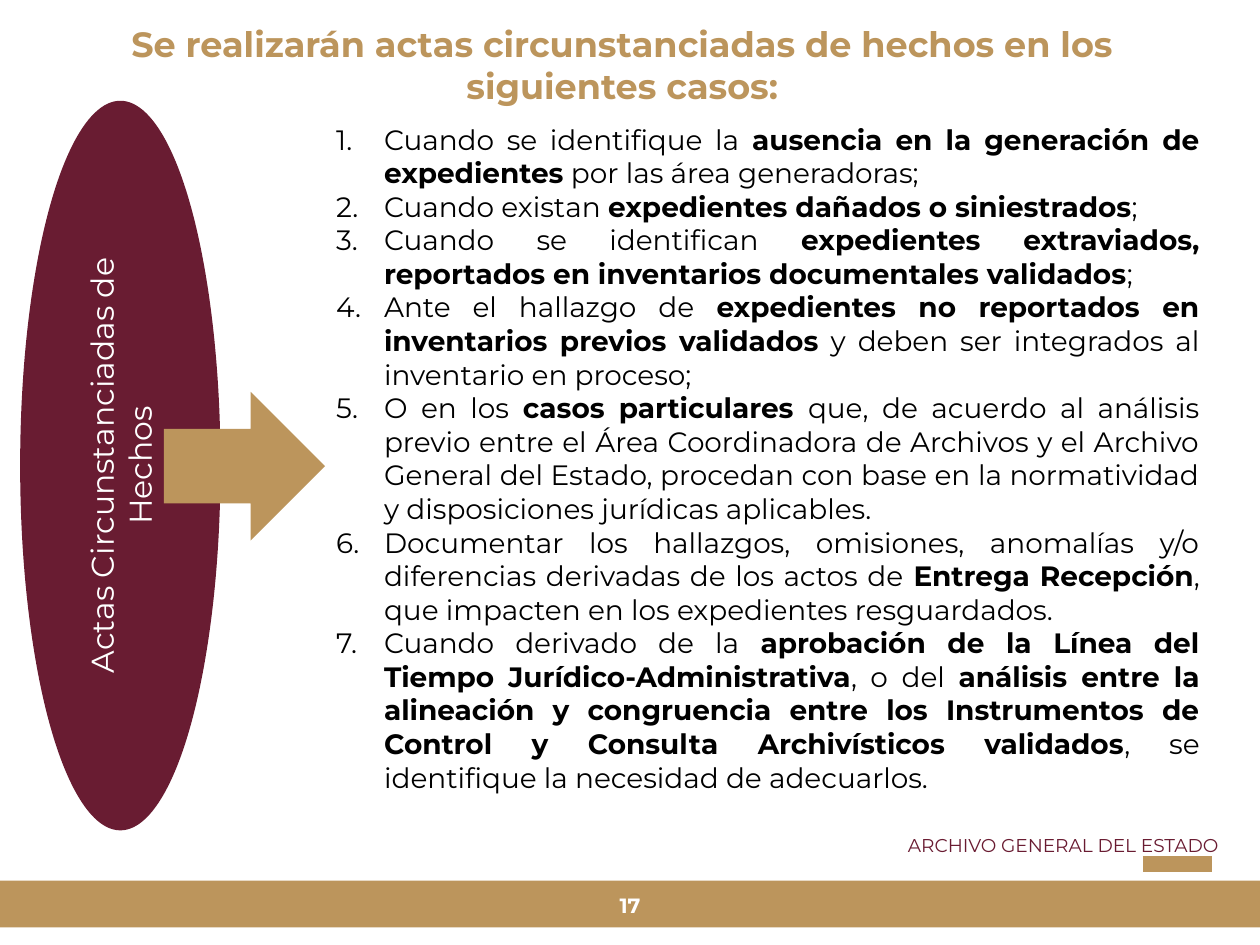
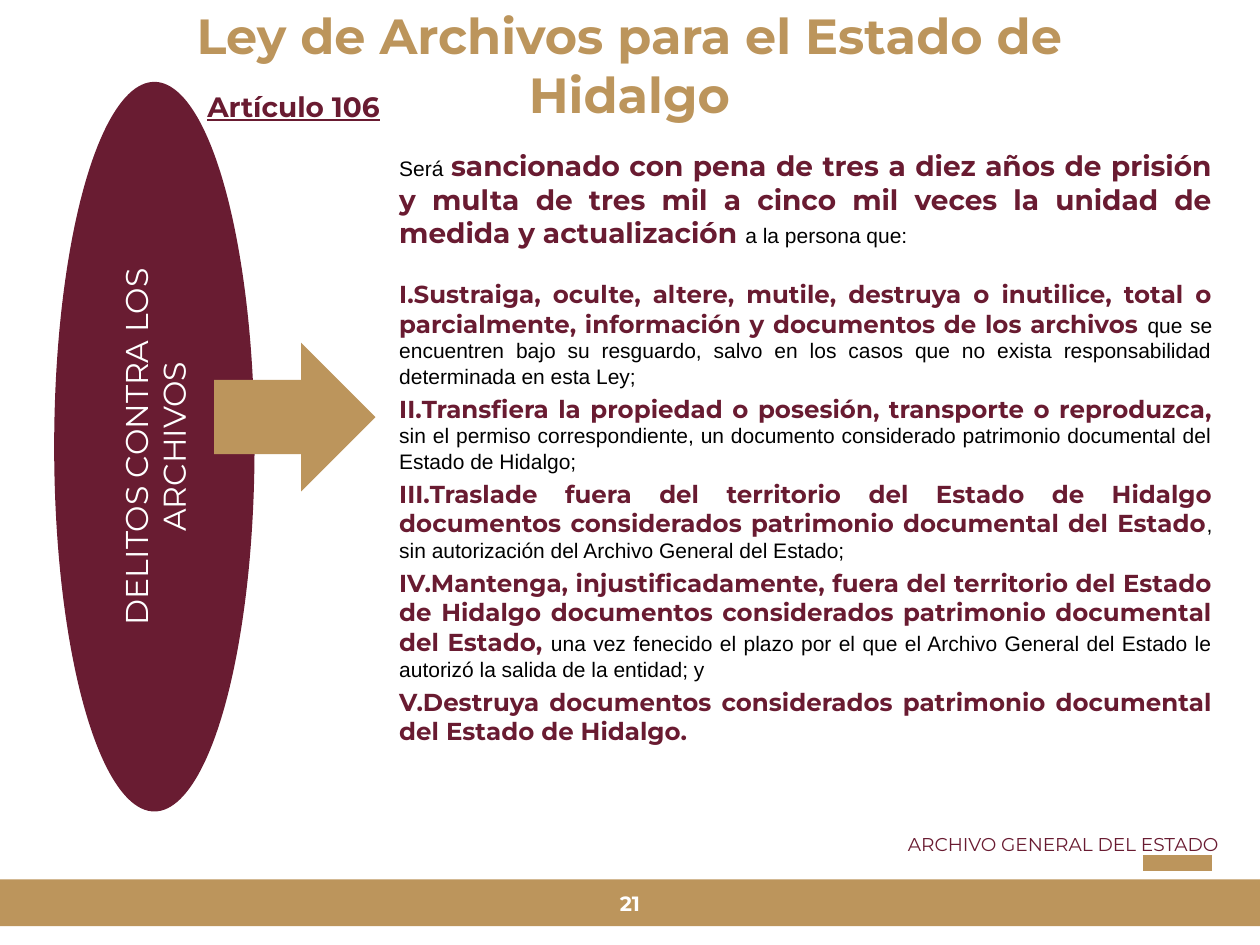
from dataclasses import dataclass

from lxml import etree
from pptx import Presentation
from pptx.dml.color import RGBColor
from pptx.enum.shapes import MSO_CONNECTOR, MSO_SHAPE
from pptx.enum.text import MSO_ANCHOR, PP_ALIGN
from pptx.oxml.ns import qn
from pptx.util import Inches, Pt

RECT, ELLIPSE, ARROW = MSO_SHAPE.RECTANGLE, MSO_SHAPE.OVAL, MSO_SHAPE.RIGHT_ARROW
STRAIGHT = MSO_CONNECTOR.STRAIGHT
TOP, MIDDLE = MSO_ANCHOR.TOP, MSO_ANCHOR.MIDDLE
CENTER, RIGHT, JUSTIFY = PP_ALIGN.CENTER, PP_ALIGN.RIGHT, PP_ALIGN.JUSTIFY

GOLD, WINE, DARK_WINE = "BC955C", "691B31", "691C32"
WHITE, BLACK = "FFFFFF", "000000"


@dataclass(frozen=True)
class Style:
    size: float
    color: str
    bold: bool = False
    font: str = "Montserrat"
    underline: bool = False


@dataclass(frozen=True)
class Box:
    left: float
    top: float
    width: float
    height: float

    def lengths(self):
        return [Inches(v) for v in (self.left, self.top, self.width, self.height)]


@dataclass(frozen=True)
class Para:
    runs: list[tuple[str, Style]]
    align: PP_ALIGN = JUSTIFY
    before: float = 0
    spacing: float = 1
    numbering: str = ""
    indent: float = 0


PAGE_NUMBER = Style(11.8, WHITE, True)
FOOTER = Style(10.6, WINE)
SIDE_LABEL = Style(18, WHITE)
CASE = Style(16, BLACK)
CASE_KEY = Style(16, BLACK, True)
PENALTY = Style(16, WINE, True)
ARTICLE = Style(16, WINE, True, underline=True)
OFFENCE = Style(14, WINE, True)
DETAIL = Style(12, BLACK, font="Arial")

CASES = [
    ["Cuando se identifique la ", "ausencia en la generación de expedientes",
     " por las área generadoras;"],
    ["Cuando existan ", "expedientes dañados o siniestrados", ";"],
    ["Cuando se identifican ",
     "expedientes extraviados, reportados en inventarios documentales validados", ";"],
    ["Ante el hallazgo de ", "expedientes no reportados en inventarios previos validados",
     " y deben ser integrados al inventario en proceso;"],
    ["O en los ", "casos particulares ",
     "que, de acuerdo al análisis previo entre el Área Coordinadora de Archivos y el "
     "Archivo General del Estado, procedan con base en la normatividad y disposiciones "
     "jurídicas aplicables."],
    ["Documentar los hallazgos, omisiones, anomalías y/o diferencias derivadas de los "
     "actos de ", "Entrega Recepción", ", que impacten en los expedientes resguardados."],
    ["Cuando derivado de la ", "aprobación de la Línea del Tiempo Jurídico-Administrativa",
     ", o del ",
     "análisis entre la alineación y congruencia entre los Instrumentos de Control y "
     "Consulta Archivísticos validados", ", se identifique la necesidad de adecuarlos."],
]

OFFENCES = [
    ["Sustraiga, oculte, altere, mutile, destruya o inutilice, total o parcialmente, "
     "información y documentos de los archivos ",
     "que se encuentren bajo su resguardo, salvo en los casos que no exista "
     "responsabilidad determinada en esta Ley;"],
    ["Transfiera la propiedad o posesión, transporte o reproduzca, ",
     "sin el permiso correspondiente, un documento considerado patrimonio documental "
     "del Estado de Hidalgo;"],
    ["Traslade fuera del territorio del Estado de Hidalgo documentos considerados "
     "patrimonio documental del Estado",
     ", sin autorización del Archivo General del Estado;"],
    ["Mantenga, injustificadamente, fuera del territorio del Estado de Hidalgo "
     "documentos considerados patrimonio documental del Estado, ",
     "una vez fenecido el plazo por el que el Archivo General del Estado le autorizó "
     "la salida de la entidad; y"],
    ["Destruya documentos considerados patrimonio documental del Estado de Hidalgo."],
]


def rgb(color: str) -> RGBColor:
    return RGBColor.from_string(color)


def write(tf, paras: list[Para], inset: tuple[float, float], anchor=TOP) -> None:
    tf.word_wrap = True
    tf.vertical_anchor = anchor
    tf.margin_left = tf.margin_right = Inches(inset[0])
    tf.margin_top = tf.margin_bottom = Inches(inset[1])
    for i, para in enumerate(paras):
        p = tf.add_paragraph() if i else tf.paragraphs[0]
        p.alignment = para.align
        p.line_spacing = para.spacing
        p.space_before = Pt(para.before)
        if para.numbering:
            pPr = p._p.get_or_add_pPr()
            pPr.set("marL", str(Inches(para.indent)))
            pPr.set("indent", str(-Inches(para.indent)))
            etree.SubElement(pPr, qn("a:buAutoNum"), type=para.numbering)
        for text, style in para.runs:
            r = p.add_run()
            r.text = text
            r.font.name = style.font
            r.font.size = Pt(style.size)
            r.font.bold = style.bold
            r.font.underline = style.underline
            r.font.color.rgb = rgb(style.color)


def add_text(s, box: Box, paras: list[Para], inset=(0.1, 0.05), anchor=TOP) -> None:
    write(s.shapes.add_textbox(*box.lengths()).text_frame, paras, inset, anchor)


def add_filled(s, kind, box: Box, color: str):
    sp = s.shapes.add_shape(kind, *box.lengths())
    sp.shadow.inherit = False
    sp.fill.solid()
    sp.fill.fore_color.rgb = rgb(color)
    sp.line.fill.background()
    return sp


def add_footer(s, number: str, band_top: float) -> None:
    add_filled(s, RECT, Box(-0.02, band_top, 10.06, 0.37), GOLD)
    add_text(s, Box(4.76, band_top + 0.02, 0.48, 0.37),
             [Para([(number, PAGE_NUMBER)], CENTER, spacing=0.9)], (0.1, 0.1), MIDDLE)
    add_text(s, Box(4.68, band_top - 0.41, 5.05, 0.28),
             [Para([("ARCHIVO GENERAL DEL ESTADO", FOOTER)], RIGHT, spacing=0.9)],
             (0.06, 0.06))
    y = Inches(band_top - 0.13)
    accent = s.shapes.add_connector(STRAIGHT, Inches(9.07), y, Inches(9.62), y)
    accent.line.color.rgb = rgb(GOLD)
    accent.line.width = Pt(9)
    etree.SubElement(accent._element.spPr, qn("a:effectLst"))


def add_title(s, box: Box, text: str, size: float) -> None:
    add_text(s, box, [Para([(text, Style(size, GOLD, True))], CENTER)], (0.09, 0.04))


def add_side_label(s, text: str, left: float, top: float) -> None:
    sp = add_filled(s, ELLIPSE, Box(left, top, 1.59, 5.79), DARK_WINE)
    write(sp.text_frame, [Para([(text, SIDE_LABEL)], CENTER)], (0.08, 0.04), MIDDLE)
    sp.text_frame._txBody.bodyPr.set("vert", "vert270")


def add_arrow(s, left: float, top: float) -> None:
    add_filled(s, ARROW, Box(left, top, 1.28, 1.18), GOLD)


def build_cases_slide(prs) -> None:
    s = prs.slides.add_slide(prs.slide_layouts[6])
    add_footer(s, "17", 6.99)
    add_title(s, Box(0.16, 0.14, 9.56, 0.76),
              "Se realizarán actas circunstanciadas de hechos en los siguientes casos:", 20)
    add_side_label(s, "Actas Circunstanciadas de Hechos", 0.16, 0.8)
    add_arrow(s, 1.3, 3.11)
    paras = [
        Para([(text, CASE_KEY if i % 2 else CASE) for i, text in enumerate(case)],
             numbering="arabicPeriod", indent=0.38)
        for case in CASES
    ]
    add_text(s, Box(2.57, 0.92, 7.05, 5.76), paras)


def build_offences_slide(prs) -> None:
    s = prs.slides.add_slide(prs.slide_layouts[6])
    add_footer(s, "21", 6.98)
    add_title(s, Box(0.77, 0, 8.45, 0.57), "Ley de Archivos para el Estado de Hidalgo", 28.2)
    add_side_label(s, "DELITOS CONTRA LOS ARCHIVOS", 0.43, 0.65)
    add_arrow(s, 1.7, 2.72)
    intro = Para([
        ("Será ", DETAIL),
        ("sancionado con pena de tres a diez años de prisión y multa de tres mil a cinco "
         "mil veces la unidad de medida y actualización ", PENALTY),
        ("a la persona que:", DETAIL),
    ])
    offences = [
        Para(list(zip(offence, (OFFENCE, DETAIL))), before=3 if i else 17,
             numbering="romanUcPeriod")
        for i, offence in enumerate(OFFENCES)
    ]
    add_text(s, Box(3.07, 1.13, 6.65, 4.91), [intro, *offences])
    add_text(s, Box(1.28, 0.66, 2.1, 0.37), [Para([("Artículo 106", ARTICLE)], CENTER)])


def main() -> None:
    prs = Presentation()
    prs.slide_width, prs.slide_height = Inches(10), Inches(7.5)
    build_cases_slide(prs)
    build_offences_slide(prs)
    prs.save("out.pptx")


if __name__ == "__main__":
    main()
